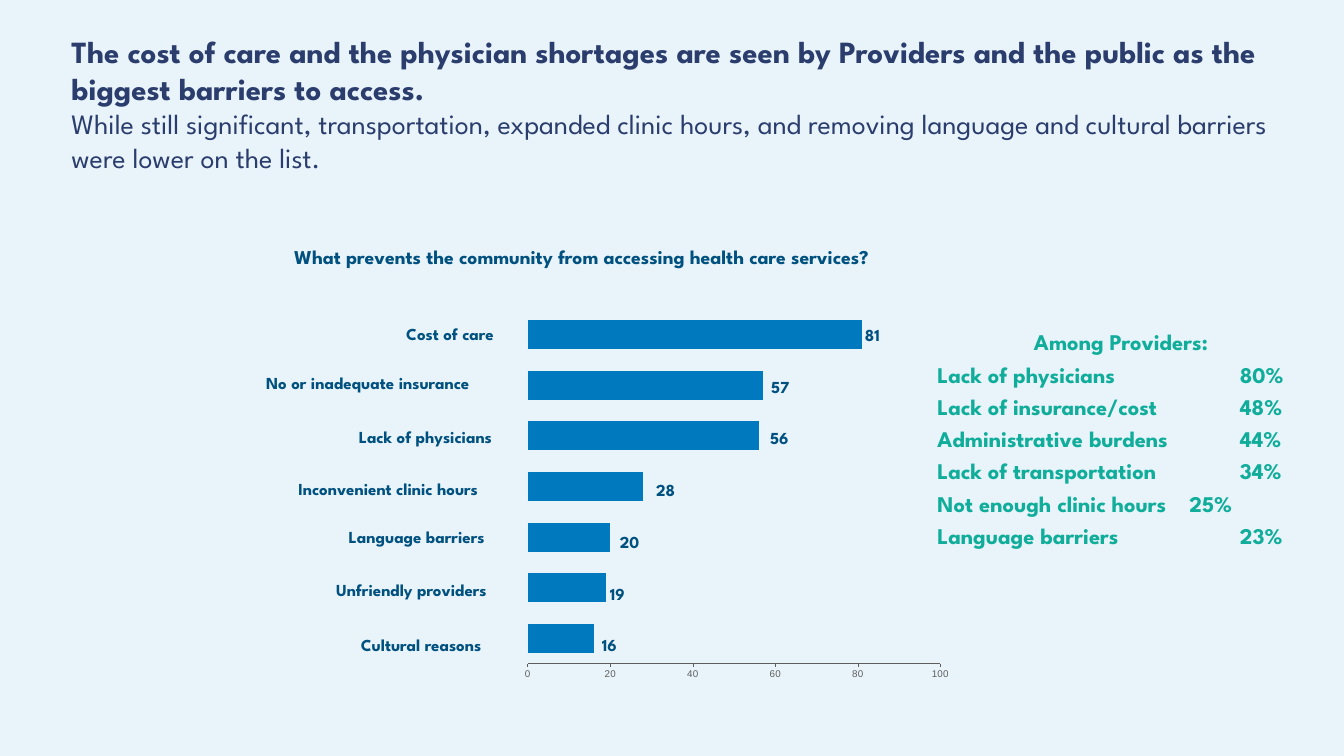
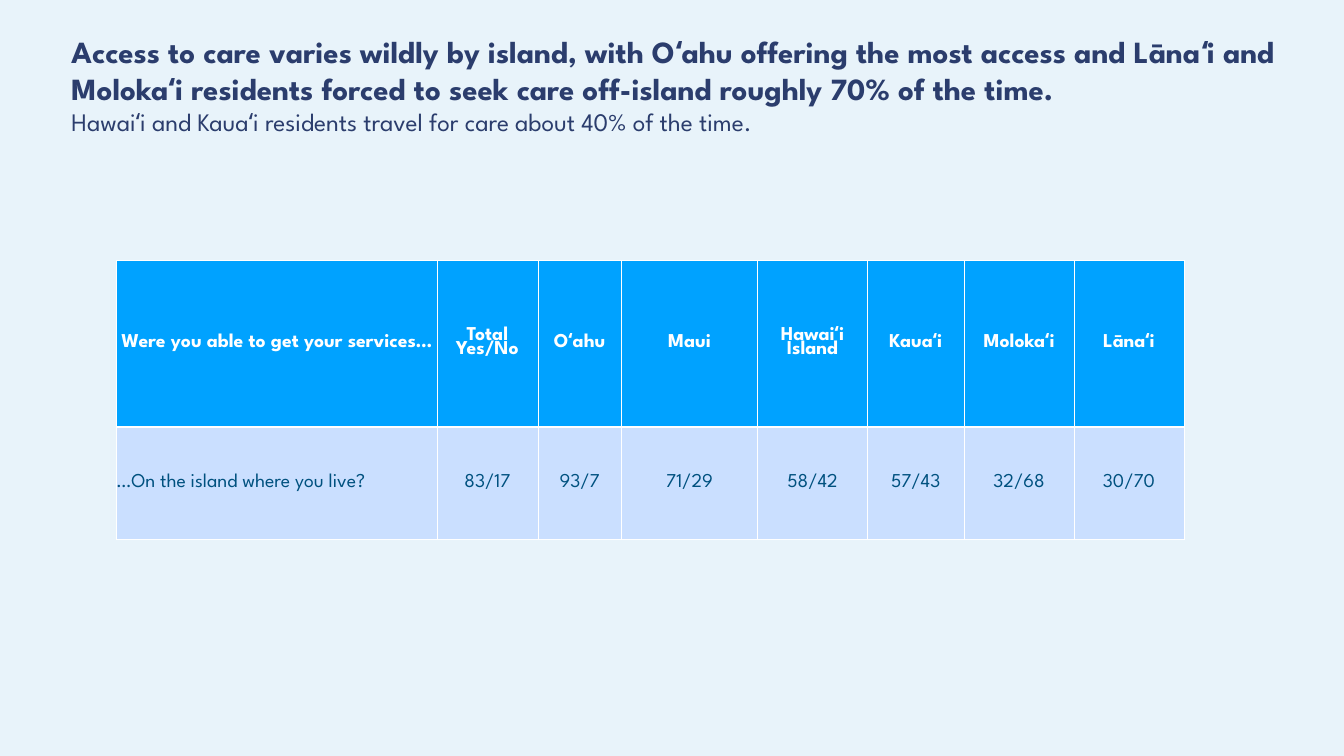
import pptx
import pptx.chart.data
import pptx.dml.color
import pptx.enum.chart
import pptx.enum.text
import pptx.oxml
import pptx.oxml.ns
import pptx.util

Pt = pptx.util.Pt
ALIGN = pptx.enum.text.PP_ALIGN
ANCHOR = pptx.enum.text.MSO_ANCHOR
NSDECLS = pptx.oxml.ns.nsdecls("a", "c")

# name, share, left and top of the name, left of the share
BARRIERS = [
    ("Cost of care", 81, 576, 457.9, 1231.2),
    ("No or inadequate insurance", 57, 375.8, 528.5, 1097.3),
    ("Lack of physicians", 56, 508.3, 604.8, 1095.8),
    ("Inconvenient clinic hours", 28, 421.9, 679.7, 933.1),
    ("Language barriers", 20, 493.9, 748.8, 881.3),
    ("Unfriendly providers", 19, 475.9, 823.7, 866.9),
    ("Cultural reasons", 16, 511.2, 902.2, 855.4),
]
SHARE_TOP, SHARE_STEP = 459.4, 73.9

# answer, share, tab stop
PROVIDER_ANSWERS = [
    ("Lack of physicians", "80%", 432),
    ("Lack of insurance/cost", "48%", 432),
    ("Administrative burdens", "44%", 432),
    ("Lack of transportation", "34%", 432),
    ("Not enough clinic hours", "25%", 360),
    ("Language barriers", "23%", 432),
]

# heading lines, yes/no answer, column width
ISLANDS = [
    (["Were you able to get your services…"], "…On the island where you live?", 458),
    (["Total", "Yes/No"], "83/17", 144),
    (["Oʻahu"], "93/7", 119.5),
    (["Maui"], "71/29", 194.4),
    (["Hawaiʻi Island"], "58/42", 157),
    (["Kauaʻi"], "57/43", 138.2),
    (["Molokaʻi"], "32/68", 157),
    (["Lānaʻi"], "30/70", 157),
]


def rgb(value):
    return pptx.dml.color.RGBColor.from_string(value)


class Deck:
    FONT = "League Spartan"
    BACKGROUND = "E8F3FA"
    NAVY = "2B3D6D"
    INK = "00517F"
    TEAL = "10AD9B"
    BAR = "0079BF"
    AXIS = "5E5E5E"
    HEADER = "00A2FF"
    ROW = "CADFFF"
    WHITE = "FFFFFF"

    def __init__(self):
        self.presentation = pptx.Presentation()
        self.presentation.slide_width = Pt(1920)
        self.presentation.slide_height = Pt(1080)
        self.slide = None

    def new_slide(self):
        self.slide = self.presentation.slides.add_slide(self.presentation.slide_layouts[6])
        background = self.slide.background.fill
        background.solid()
        background.fore_color.rgb = rgb(self.BACKGROUND)

    def add_words(self, paragraph, text, size, color, bold=True, align=ALIGN.LEFT, spacing=None):
        paragraph.alignment = align
        if spacing:
            paragraph.line_spacing = spacing
        run = paragraph.add_run()
        run.text = text
        run.font.name = self.FONT
        run.font.size = Pt(size)
        run.font.bold = bold
        run.font.color.rgb = rgb(color)

    def text_frame(self, box, insets=(7.2, 3.6), anchor=ANCHOR.TOP, grow=True):
        """Add a wrapping text box; insets are (horizontal, vertical)."""
        frame = self.slide.shapes.add_textbox(*map(Pt, box)).text_frame
        frame.word_wrap = True
        frame.vertical_anchor = anchor
        frame.margin_left = frame.margin_right = Pt(insets[0])
        frame.margin_top = frame.margin_bottom = Pt(insets[1])
        if grow:
            frame.auto_size = pptx.enum.text.MSO_AUTO_SIZE.SHAPE_TO_FIT_TEXT
        return frame

    def headline(self, finding, detail, detail_size, width):
        frame = self.text_frame((95, 43.2, width, 147), grow=False)
        self.add_words(frame.paragraphs[0], finding, 44, self.NAVY)
        self.add_words(frame.add_paragraph(), detail, detail_size, self.NAVY, bold=False)

    def question(self, text, box):
        frame = self.text_frame(box)
        self.add_words(frame.paragraphs[0], text, 28, self.INK, align=ALIGN.CENTER)

    def bar_label(self, text, left, top, width):
        frame = self.text_frame((left, top, width, 37.4), (4.3, 4.3), ANCHOR.MIDDLE)
        self.add_words(frame.paragraphs[0], text, 24, self.INK)

    def bar_chart(self, names, shares, box, plot_box):
        """Add the bars; plot_box is measured from the chart's corner."""
        data = pptx.chart.data.CategoryChartData()
        data.categories = names
        data.add_series("Series 1", shares)
        kind = pptx.enum.chart.XL_CHART_TYPE.BAR_STACKED
        chart = self.slide.shapes.add_chart(kind, *map(Pt, box), data).chart
        chart.has_legend = False
        chart.has_title = False
        chart.font.name = "Arial"
        chart.font.size = Pt(10)
        chart.font.color.rgb = rgb(self.AXIS)

        plot = chart.plots[0]
        plot.gap_width = 75
        plot.overlap = 100
        plot.vary_by_categories = False
        fill = plot.series[0].format.fill
        fill.solid()
        fill.fore_color.rgb = rgb(self.BAR)

        chart.category_axis.visible = False
        scale = chart.value_axis
        scale.minimum_scale, scale.maximum_scale, scale.major_unit = 0, 100, 20
        scale.has_major_gridlines = False
        scale.major_tick_mark = pptx.enum.chart.XL_TICK_MARK.OUTSIDE
        scale.format.line.color.rgb = rgb(self.AXIS)
        scale.format.line.width = Pt(0.75)
        scale.tick_labels.font.name = "Arial"
        scale.tick_labels.font.size = Pt(14)
        scale.tick_labels.font.color.rgb = rgb(self.AXIS)
        self.place_plot(chart, box[2:], plot_box)

    def place_plot(self, chart, chart_size, plot_box):
        """Fix the inner plot area as fractions of the chart."""
        modes = "".join(f'<c:{side}Mode val="edge"/>' for side in "xy")
        sizes = "".join(f'<c:{side} val="{length / whole:.4f}"/>'
                        for side, length, whole in zip("xywh", plot_box, chart_size * 2))
        layout = pptx.oxml.parse_xml(
            f'<c:layout {NSDECLS}><c:manualLayout><c:layoutTarget val="inner"/>'
            f"{modes}{sizes}</c:manualLayout></c:layout>")
        plot_area = chart._chartSpace.chart.plotArea
        for automatic in plot_area.findall(pptx.oxml.ns.qn("c:layout")):
            plot_area.remove(automatic)
        plot_area.insert(0, layout)

    def answer_list(self, heading, answers, box):
        frame = self.text_frame(box, (3.6, 3.6))
        self.add_words(frame.paragraphs[0], heading, 32, self.TEAL,
                       align=ALIGN.CENTER, spacing=1.2)
        for answer, share, stop in answers:
            paragraph = frame.add_paragraph()
            paragraph._p.get_or_add_pPr().append(pptx.oxml.parse_xml(
                f'<a:tabLst {NSDECLS}><a:tab pos="{Pt(stop)}" algn="l"/></a:tabLst>'))
            self.add_words(paragraph, f"{answer}\t{share}", 32, self.TEAL, spacing=1.2)

    def cell(self, cell, lines, fill, color, bold, align, insets, bottom):
        """Fill one table cell; bottom is the width of its lower border."""
        cell.vertical_anchor = ANCHOR.MIDDLE
        cell.margin_left = cell.margin_right = Pt(insets[0])
        cell.margin_top = cell.margin_bottom = Pt(insets[1])
        cell.fill.solid()
        cell.fill.fore_color.rgb = rgb(fill)
        for index, line in enumerate(lines):
            frame = cell.text_frame
            paragraph = frame.add_paragraph() if index else frame.paragraphs[0]
            self.add_words(paragraph, line, 28, color, bold, align, spacing=0.78)
        borders = {"lnL": 1, "lnR": 1, "lnT": 1, "lnB": bottom}
        for index, (edge, width) in enumerate(borders.items()):
            cell._tc.get_or_add_tcPr().insert(index, pptx.oxml.parse_xml(
                f'<a:{edge} {NSDECLS} w="{Pt(width)}"><a:solidFill>'
                f'<a:srgbClr val="{self.WHITE}"/></a:solidFill></a:{edge}>'))

    def island_table(self, islands, left, top, heights):
        width = sum(island[2] for island in islands)
        table = self.slide.shapes.add_table(
            2, len(islands), Pt(left), Pt(top), Pt(width), Pt(sum(heights))).table
        for row, height in zip(table.rows, heights):
            row.height = Pt(height)
        for index, (heading, answer, column_width) in enumerate(islands):
            table.columns[index].width = Pt(column_width)
            self.cell(table.cell(0, index), heading, self.HEADER, self.WHITE, True,
                      ALIGN.CENTER, (7.2, 3.6), bottom=3)
            self.cell(table.cell(1, index), [answer], self.ROW, self.INK, False,
                      ALIGN.CENTER if index else ALIGN.LEFT, (0, 0), bottom=1)


def barriers_slide(deck):
    deck.new_slide()
    deck.headline(
        "The cost of care and the physician shortages are seen by Providers and the public "
        "as the biggest barriers to access.",
        "While still significant, transportation, expanded clinic hours, and removing language "
        "and cultural barriers were lower on the list.", 40, 1730)
    deck.question("What prevents the community from accessing health care services?",
                  (56.2, 347, 1548.7, 41))
    from_bottom = BARRIERS[::-1]
    deck.bar_chart([barrier[0] for barrier in from_bottom],
                   [barrier[1] for barrier in from_bottom],
                   (95, 368.6, 1292.4, 621.4), (659, 73.3, 589.3, 506.4))
    for index, (name, share, name_left, name_top, share_left) in enumerate(BARRIERS):
        deck.bar_label(name, name_left, name_top, 367.2)
        deck.bar_label(str(share), share_left, SHARE_TOP + index * SHARE_STEP, 64.8)
    deck.answer_list("Among Providers:", PROVIDER_ANSWERS, (1335.6, 457.9, 532, 371.5))


def islands_slide(deck):
    deck.new_slide()
    deck.headline(
        "Access to care varies wildly by island, with Oʻahu offering the most access and "
        "Lānaʻi and Molokaʻi residents forced to seek care off-island roughly 70% of the time.",
        "Hawaiʻi and Kauaʻi residents travel for care about 40% of the time.", 36, 1798)
    deck.island_table(ISLANDS, 166.3, 371.5, (238.3, 161.3))


def main():
    deck = Deck()
    barriers_slide(deck)
    islands_slide(deck)
    deck.presentation.save("out.pptx")


if __name__ == "__main__":
    main()
